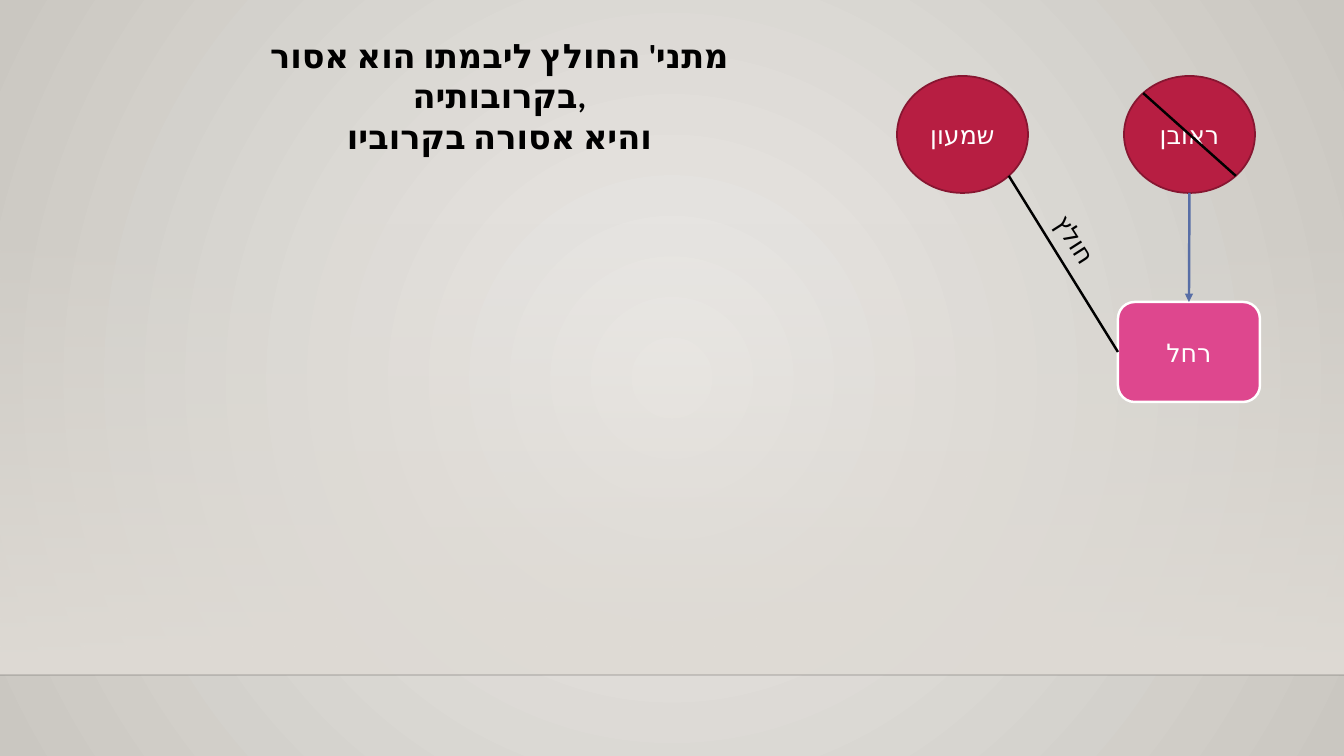
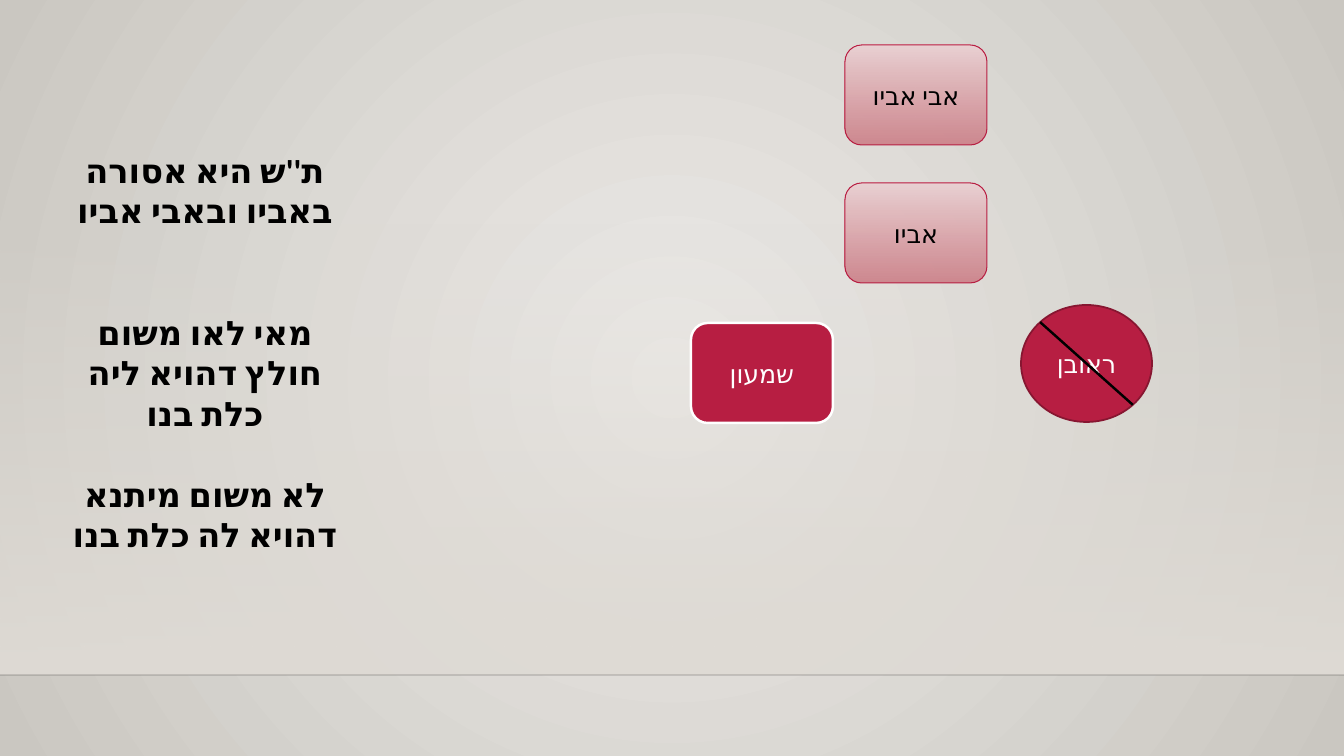
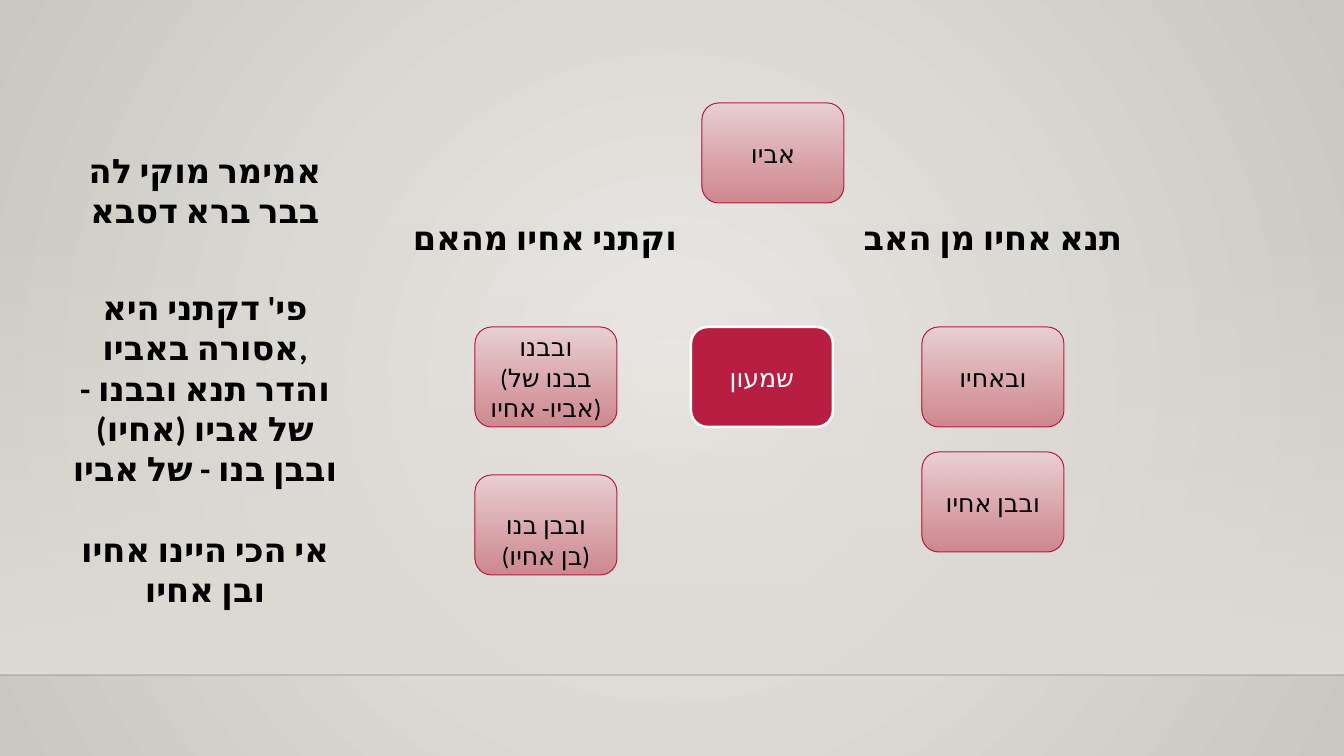
from math import sqrt

from lxml.etree import SubElement
from pptx import Presentation
from pptx.dml.color import RGBColor
from pptx.enum.lang import MSO_LANGUAGE_ID as Lang
from pptx.enum.shapes import MSO_CONNECTOR as Connector
from pptx.enum.shapes import MSO_SHAPE as Preset
from pptx.enum.text import MSO_ANCHOR as Anchor
from pptx.enum.text import MSO_AUTO_SIZE as AutoSize
from pptx.enum.text import PP_ALIGN as Align
from pptx.oxml.ns import qn
from pptx.util import Pt

EMU_PER_PX = 914400 / 100.8
SLIDE_W, SLIDE_H = 1344, 756
FLOOR_TOP, FLOOR_LINE = 223, 675
CIRCLE_W, CIRCLE_H = 131, 117
CARD_W, CARD_H = 142, 100
COMMENT_X, COMMENT_W = 49, 312
LINE_H = 30

BLACK = RGBColor(0x00, 0x00, 0x00)
WHITE = RGBColor(0xFF, 0xFF, 0xFF)
CRIMSON = RGBColor(0xB7, 0x1E, 0x42)
DARK_CRIMSON = RGBColor(0x87, 0x16, 0x31)
PINK = RGBColor(0xDE, 0x47, 0x8E)
BLUE = RGBColor(0x58, 0x6E, 0xA6)
ROSE_LIGHT = RGBColor(0xEA, 0xD1, 0xD3)
ROSE_DARK = RGBColor(0xCD, 0x82, 0x8A)
WALL_LIGHT = RGBColor(0xEC, 0xEA, 0xE7)
WALL_DARK = RGBColor(0xCA, 0xC7, 0xC1)
FLOOR = RGBColor(0xDF, 0xDB, 0xD5)

FONT = "Calibri"
BASE_FONT = {"name": FONT, "language_id": Lang.HEBREW}
LABEL = BASE_FONT | {"size": Pt(18), "bold": False}
HEADING = BASE_FONT | {"size": Pt(24), "bold": True}


def px(length):
    return round(length * EMU_PER_PX)


def set_alpha(color_parent, percent):
    color = color_parent.find(".//" + qn("a:srgbClr"))
    SubElement(color, qn("a:alpha")).set("val", str(percent * 1000))


def fill_gradient(fill, colors, alphas=(100, 100)):
    fill.gradient()
    fill.gradient_angle = 270
    gradient = fill._xPr.find(qn("a:gradFill"))
    stops = gradient.findall(".//" + qn("a:gs"))
    for stop, element, color, alpha in zip(fill.gradient_stops, stops, colors, alphas):
        stop.color.rgb = color
        if alpha < 100:
            set_alpha(element, alpha)
    return gradient


def write(frame, lines, style, color):
    frame.word_wrap = True
    for index, line in enumerate(lines):
        paragraph = frame.add_paragraph() if index else frame.paragraphs[0]
        paragraph.alignment = Align.CENTER
        run = paragraph.add_run()
        run.text = line
        for key, value in style.items():
            setattr(run.font, key, value)
        run.font.color.rgb = color
        SubElement(run.font._element, qn("a:cs")).set("typeface", FONT)


def add_text(slide, x, y, width, height, *lines, style=HEADING, rotation=0):
    box = slide.shapes.add_textbox(px(x), px(y), px(width), px(height))
    box.rotation = rotation
    write(box.text_frame, lines, style, BLACK)
    box.text_frame.auto_size = AutoSize.SHAPE_TO_FIT_TEXT


def add_figure(slide, preset, x, y, width, height, border, weight):
    figure = slide.shapes.add_shape(preset, px(x), px(y), px(width), px(height))
    figure.shadow.inherit = False
    figure.line.color.rgb = border
    figure.line.width = Pt(weight)
    figure.text_frame.vertical_anchor = Anchor.MIDDLE
    return figure


def add_brother(slide, x, y, name):
    circle = add_figure(slide, Preset.OVAL, x, y, CIRCLE_W, CIRCLE_H, DARK_CRIMSON, 1.25)
    circle.fill.solid()
    circle.fill.fore_color.rgb = CRIMSON
    write(circle.text_frame, [name], LABEL, WHITE)


def add_spouse_card(slide, x, y, name, color=CRIMSON):
    card = add_figure(slide, Preset.ROUNDED_RECTANGLE, x, y, CARD_W, CARD_H, WHITE, 1.75)
    card.fill.solid()
    card.fill.fore_color.rgb = color
    write(card.text_frame, [name], LABEL, WHITE)
    return card


def add_relative_card(slide, x, y, *lines, drop=0):
    card = add_figure(slide, Preset.ROUNDED_RECTANGLE, x, y, CARD_W, CARD_H, CRIMSON, 0.75)
    fill_gradient(card.fill, (ROSE_LIGHT, ROSE_DARK), (100, 92))
    write(card.text_frame, lines, LABEL, BLACK)
    card.text_frame.margin_top += px(drop)


def add_line(slide, start, end, color=BLACK, weight=1.75):
    line = slide.shapes.add_connector(Connector.STRAIGHT, *map(px, start + end))
    line.line.color.rgb = color
    line.line.width = Pt(weight)
    SubElement(line._element.spPr, qn("a:effectLst"))
    return line


def circle_corners(x, y):
    inset = (1 - sqrt(0.5)) / 2
    left, top = x + CIRCLE_W * inset, y + CIRCLE_H * inset
    right, bottom = x + CIRCLE_W * (1 - inset), y + CIRCLE_H * (1 - inset)
    return (left, top), (right, bottom)


def add_deceased_brother(slide, x, y, name):
    add_brother(slide, x, y, name)
    add_line(slide, *circle_corners(x, y))


def decorate_master(master, slide):
    wall = fill_gradient(master.background.fill, (WALL_LIGHT, WALL_DARK))
    wall.remove(wall.find(qn("a:lin")))
    center = SubElement(wall, qn("a:path"))
    center.set("path", "circle")
    focus = SubElement(center, qn("a:fillToRect"))
    for side in "ltrb":
        focus.set(side, "50000")

    floor = add_figure(slide, Preset.RECTANGLE, 0, FLOOR_TOP, SLIDE_W,
                       FLOOR_LINE - FLOOR_TOP, FLOOR, 1)
    floor.line.fill.background()
    fill_gradient(floor.fill, (FLOOR, FLOOR), (0, 100))
    edge = add_line(slide, (0, FLOOR_LINE), (SLIDE_W, FLOOR_LINE), weight=1)
    set_alpha(edge.line._ln, 20)
    for part in (floor, edge):
        master.shapes._spTree.append(part._element)


def build_mishnah(slide):
    reuven, shimon = (1124, 76), (897, 76)
    add_deceased_brother(slide, *reuven, "ראובן")
    add_brother(slide, *shimon, "שמעון")
    rachel = add_spouse_card(slide, 1118, 302, "רחל", PINK)

    foot = (reuven[0] + CIRCLE_W / 2, reuven[1] + CIRCLE_H)
    marriage = add_line(slide, foot, (foot[0], 302), BLUE)
    marriage.end_connect(rachel, 0)
    SubElement(marriage.line._ln, qn("a:tailEnd")).set("type", "triangle")
    chalitzah = add_line(slide, circle_corners(*shimon)[1], (1118, 352))
    chalitzah.end_connect(rachel, 1)

    add_text(slide, 247, 30, 505, 132,
             "מתני' החולץ ליבמתו הוא אסור בקרובותיה,", "והיא אסורה בקרוביו")
    add_text(slide, 984, 219, 183, 40, "חולץ", style=LABEL, rotation=57.4)


def build_father_proof(slide):
    add_spouse_card(slide, 691, 323, "שמעון")
    add_relative_card(slide, 845, 183, "אביו")
    add_relative_card(slide, 845, 45, "אבי אביו")
    comments = ("ת''ש היא אסורה באביו ובאבי אביו",
                "מאי לאו משום חולץ דהויא ליה כלת בנו",
                "לא משום מיתנא דהויא לה כלת בנו")
    for index, comment in enumerate(comments):
        add_text(slide, COMMENT_X, 145 + 162 * index, COMMENT_W, 92, comment)
    add_deceased_brother(slide, 1021, 305, "ראובן")


def build_brothers_proof(slide):
    add_text(slide, COMMENT_X, 145, COMMENT_W, 92, "אמימר מוקי לה בבר ברא דסבא")
    add_text(slide, COMMENT_X, 282, COMMENT_W, 214, "פי' דקתני היא אסורה באביו,",
             "והדר תנא ובבנו - של אביו (אחיו)", "ובבן בנו - של אביו")
    add_text(slide, COMMENT_X, 524, COMMENT_W, 92, "אי הכי היינו אחיו ובן אחיו")
    add_text(slide, 837, 212, COMMENT_W, 50, "תנא אחיו מן האב")
    add_text(slide, 389, 212, COMMENT_W, 50, "וקתני אחיו מהאם")

    add_relative_card(slide, 702, 103, "אביו")
    add_spouse_card(slide, 691, 327, "שמעון")
    add_relative_card(slide, 475, 327, "ובבנו", "(בבנו של אביו- אחיו)")
    add_relative_card(slide, 475, 475, "ובבן בנו", "(בן אחיו)", drop=LINE_H)
    add_relative_card(slide, 922, 327, "ובאחיו")
    add_relative_card(slide, 922, 452, "ובבן אחיו")


def main():
    deck = Presentation()
    deck.slide_width, deck.slide_height = px(SLIDE_W), px(SLIDE_H)
    blank = deck.slide_layouts[6]
    builders = (build_mishnah, build_father_proof, build_brothers_proof)
    slides = [deck.slides.add_slide(blank) for _ in builders]
    decorate_master(deck.slide_master, slides[0])
    for build, slide in zip(builders, slides):
        build(slide)
    deck.save("out.pptx")


if __name__ == "__main__":
    main()
